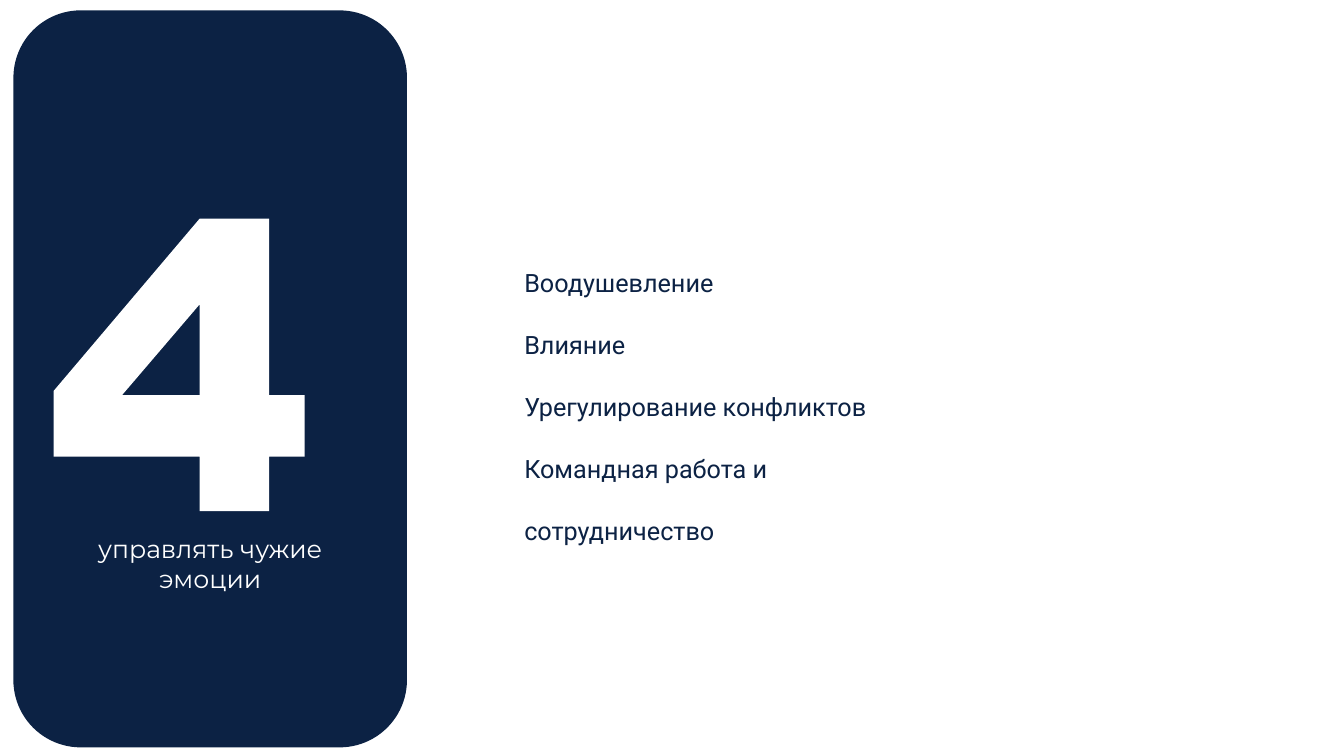
from dataclasses import dataclass

from pptx import Presentation
from pptx.dml.color import RGBColor
from pptx.enum.shapes import MSO_SHAPE
from pptx.enum.text import PP_ALIGN
from pptx.util import Inches, Pt

ROUNDED = MSO_SHAPE.ROUNDED_RECTANGLE
LEFT, CENTER = PP_ALIGN.LEFT, PP_ALIGN.CENTER


@dataclass(frozen=True)
class Theme:
    navy: RGBColor = RGBColor(0x0C, 0x22, 0x44)
    white: RGBColor = RGBColor(0xFF, 0xFF, 0xFF)
    caption_font: str = "Montserrat"
    skills_font: str = "Roboto"
    text_size: Pt = Pt(18)


theme = Theme()
deck = Presentation()
deck.slide_width, deck.slide_height = Inches(13.33), Inches(7.5)
slide = deck.slides.add_slide(deck.slide_layouts[6])


def grid(*numbers):
    """Turn alternating columns and rows of a 100 by 100 grid into lengths."""
    units = deck.slide_width / 100, deck.slide_height / 100
    return [round(number * units[i % 2]) for i, number in enumerate(numbers)]


def add_lines(area, lines, font_name, color, align, line_spacing):
    """Add a text box; line_spacing applies from the second paragraph on."""
    frame = slide.shapes.add_textbox(*grid(*area)).text_frame
    frame.word_wrap = True
    frame.margin_left = frame.margin_right = frame.margin_bottom = 0
    frame.margin_top = Inches(0.01)
    frame.text = "\n".join(lines)
    for number, paragraph in enumerate(frame.paragraphs):
        paragraph.alignment = align
        paragraph.line_spacing = line_spacing if number else 1.0
        paragraph.space_before = Pt(0 if number else 1)
        for run in paragraph.runs:
            run.font.name = font_name
            run.font.size = theme.text_size
            run.font.color.rgb = color


# Side panel
panel = slide.shapes.add_shape(ROUNDED, *grid(1.05, 1.47, 29.18, 97.3))
panel.adjustments[0] = 0.17
panel.shadow.inherit = False
panel.fill.solid()
panel.fill.fore_color.rgb = theme.navy
panel.line.color.rgb = theme.navy
panel.line.width = Pt(1)

add_lines((6.53, 70.4, 18.23, 8.4), ["управлять чужие", "эмоции"],
          theme.caption_font, theme.white, CENTER, 1.0)

# Large digit 4: foot, diagonal with crossbar, and stem
stem_left, stem_right = 14.85, 20.03
notch, bar_top, bar_bottom = 40.27, 52.27, 60.4
digit_top, digit_bottom = 28.93, 67.6
bar_left, bar_right = 3.98, 22.66
foot = [(stem_right, bar_bottom), (stem_left, bar_bottom),
        (stem_left, digit_bottom), (stem_right, digit_bottom)]
diagonal = [(stem_right, digit_top), (stem_left, digit_top), (bar_left, 51.73),
            (bar_left, bar_bottom), (bar_right, bar_bottom), (bar_right, bar_top),
            (9.08, bar_top), (stem_left, notch), (stem_right, notch)]
stem = [(stem_right, notch), (stem_left, notch),
        (stem_left, bar_top), (stem_right, bar_top)]

outline = slide.shapes.build_freeform(*grid(*foot[0]))
for part in (foot, diagonal, stem):
    start, *corners = [grid(*point) for point in part]
    if part is not foot:
        outline.move_to(*start)
    outline.add_line_segments(corners, close=True)
digit = outline.convert_to_shape()
digit.shadow.inherit = False
digit.fill.solid()
digit.fill.fore_color.rgb = theme.white
digit.line.fill.background()

# Skills
skills = ["Воодушевление", "Влияние", "Урегулирование конфликтов",
          "Командная работа и\vсотрудничество"]
add_lines((39.01, 35.2, 32.26, 28.4), skills,
          theme.skills_font, theme.navy, LEFT, 2.05)

deck.save("out.pptx")
